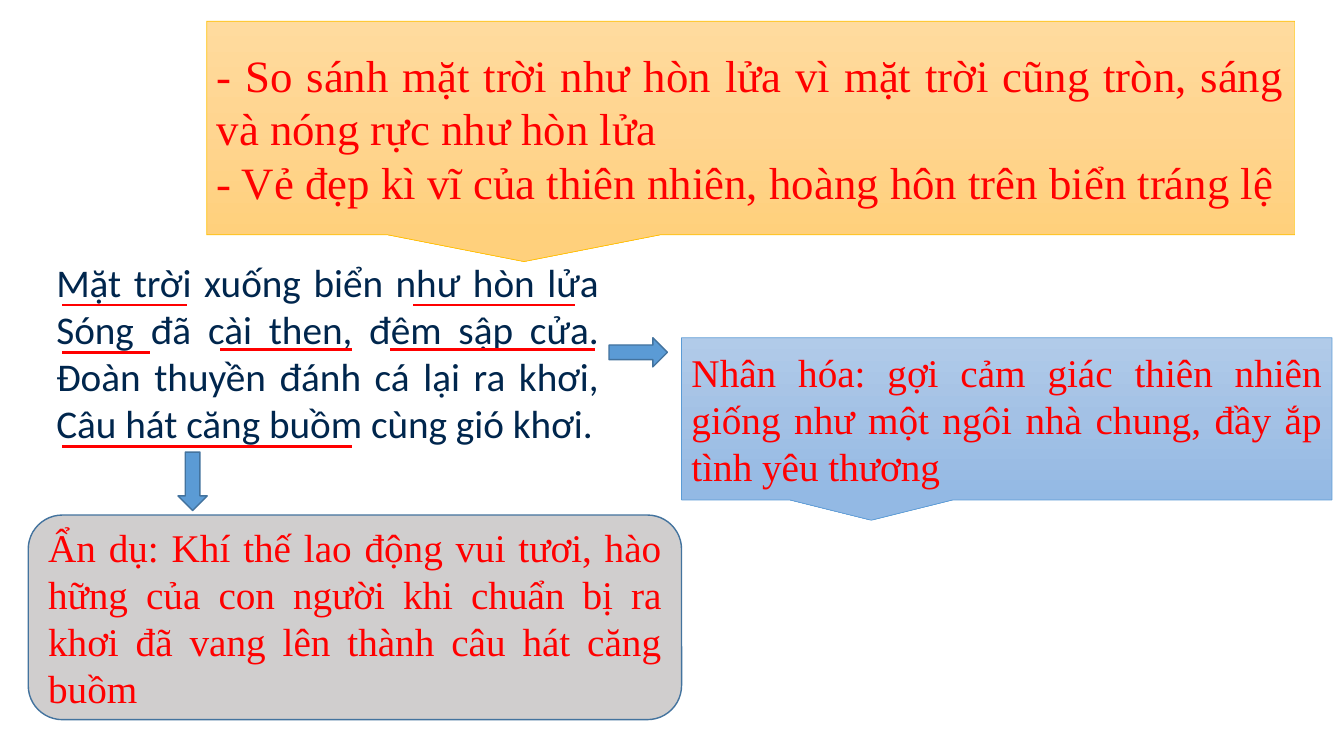
"""Build a slide that explains the imagery in a stanza about the sea at sunset."""
from copy import deepcopy
from dataclasses import dataclass
from typing import Any

from pptx import Presentation
from pptx import util as u
from pptx.dml.color import RGBColor
from pptx.enum import shapes, text
from pptx.oxml import ns, parse_xml

SCALE = 9144


@dataclass(frozen=True)
class Theme:
    red: str = "FF0000"
    navy: str = "00264D"
    blue: str = "5B9BD5"
    dark_blue: str = "43739E"
    gold: str = "FFC000"
    grey: str = "D0CECE"
    gold_fade: tuple[str, ...] = ("FFDB9E", "FFD590", "FFD07C")
    blue_fade: tuple[str, ...] = ("B1CBE9", "A3C1E5", "93B9E4")
    serif: str = "Times New Roman"
    sans: str = "Calibri"
    large: int = 32
    medium: int = 28


THEME = Theme()
SHAPE = shapes.MSO_SHAPE


@dataclass(frozen=True)
class Panel:
    preset: SHAPE
    place: tuple[int, int, int, int]
    fill: tuple[str, ...]
    line: str
    weight: float = 1
    lines: tuple[str, ...] = ()
    size: int = THEME.medium
    rotation: int = 0


@dataclass(frozen=True)
class Underline:
    left: int
    right: int
    y: int
    weight: float = 2.25


POEM_PLACE = (46, 251, 558, 197)
POEM = "\v".join((
    "Mặt trời xuống biển như hòn lửa",
    "Sóng đã cài then, đêm sập cửa.",
    "Đoàn thuyền đánh cá lại ra khơi,",
    "Câu hát căng buồm cùng gió khơi.",
))

UNDERLINES = (
    Underline(62, 185, 303, 1.5),
    Underline(410, 570, 303, 1.5),
    Underline(62, 149, 350),
    Underline(218, 349, 347),
    Underline(387, 590, 347),
    Underline(62, 349, 443),
)

PANELS = (
    Panel(SHAPE.RECTANGULAR_CALLOUT, (205, 21, 1079, 212), THEME.gold_fade, THEME.gold, 0.5, (
        "- So sánh mặt trời như hòn lửa vì mặt trời cũng tròn, sáng và nóng rực như hòn lửa",
        "- Vẻ đẹp kì vĩ của thiên nhiên, hoàng hôn trên biển tráng lệ",
    ), THEME.large),
    Panel(SHAPE.RECTANGULAR_CALLOUT, (676, 335, 645, 161), THEME.blue_fade, THEME.blue, 0.5, (
        "Nhân hóa: gợi cảm giác thiên nhiên giống như một ngôi nhà chung, "
        "đầy ắp tình yêu thương",
    )),
    Panel(SHAPE.RIGHT_ARROW, (604, 335, 58, 29), (THEME.blue,), THEME.dark_blue),
    Panel(SHAPE.RIGHT_ARROW, (162, 463, 58, 29), (THEME.blue,), THEME.dark_blue, rotation=90),
    Panel(SHAPE.ROUNDED_RECTANGLE, (28, 511, 648, 203), (THEME.grey,), THEME.dark_blue, lines=(
        "Ẩn dụ: Khí thế lao động vui tươi, hào hững của con người khi chuẩn bị ra khơi "
        "đã vang lên thành câu hát căng buồm",
    )),
)


def px(*lengths: int) -> list[int]:
    return [length * SCALE for length in lengths]


def apply_format(target: Any, values: dict[str, Any]) -> None:
    for name, value in values.items():
        setattr(target, name, value)


def write(box: Any, lines: tuple[str, ...], frame_format: dict[str, Any],
          font: str, size: int, color: str) -> None:
    frame = box.text_frame
    apply_format(frame, {"word_wrap": True, **frame_format})
    for index, line in enumerate(lines):
        para = frame.add_paragraph() if index else frame.paragraphs[0]
        para.text = line
        para.alignment = text.PP_ALIGN.JUSTIFY
        for span in para.runs:
            apply_format(span.font, {"name": font, "size": u.Pt(size)})
            span.font.color.rgb = RGBColor.from_string(color)


def paint(box: Any, colors: tuple[str, ...]) -> None:
    if len(colors) == 1:
        box.fill.solid()
        box.fill.fore_color.rgb = RGBColor.from_string(colors[0])
        return
    box.fill.gradient()
    box.fill.gradient_angle = 270
    stops = box._element.spPr.find(".//" + ns.qn("a:gsLst"))
    stops.insert(1, deepcopy(stops[0]))
    for index, (stop, color) in enumerate(zip(box.fill.gradient_stops, colors)):
        stop.position = index / (len(colors) - 1)
        stop.color.rgb = RGBColor.from_string(color)


def outline(item: Any, color: str, weight: float) -> None:
    item.line.color.rgb = RGBColor.from_string(color)
    item.line.width = u.Pt(weight)


def add_poem(page: Any) -> None:
    box = page.shapes.add_textbox(*px(*POEM_PLACE))
    write(box, (POEM,), {"auto_size": text.MSO_AUTO_SIZE.SHAPE_TO_FIT_TEXT},
          THEME.sans, THEME.medium, THEME.navy)


def add_underline(page: Any, mark: Underline) -> None:
    rule = page.shapes.add_connector(
        shapes.MSO_CONNECTOR.STRAIGHT, *px(mark.left, mark.y, mark.right, mark.y))
    outline(rule, THEME.red, mark.weight)
    rule._element.spPr.append(parse_xml(f"<a:effectLst {ns.nsdecls('a')}/>"))


def add_panel(page: Any, panel: Panel) -> None:
    box = page.shapes.add_shape(panel.preset, *px(*panel.place))
    box.rotation = panel.rotation
    box.shadow.inherit = False
    paint(box, panel.fill)
    outline(box, panel.line, panel.weight)
    write(box, panel.lines, {"vertical_anchor": text.MSO_ANCHOR.MIDDLE},
          THEME.serif, panel.size, THEME.red)


def main() -> None:
    deck = Presentation()
    apply_format(deck, dict(zip(("slide_width", "slide_height"), px(1333, 750))))
    page = deck.slides.add_slide(deck.slide_layouts[6])
    add_poem(page)
    for panel in PANELS:
        add_panel(page, panel)
    for mark in UNDERLINES:
        add_underline(page, mark)
    deck.save("out.pptx")


if __name__ == "__main__":
    main()
